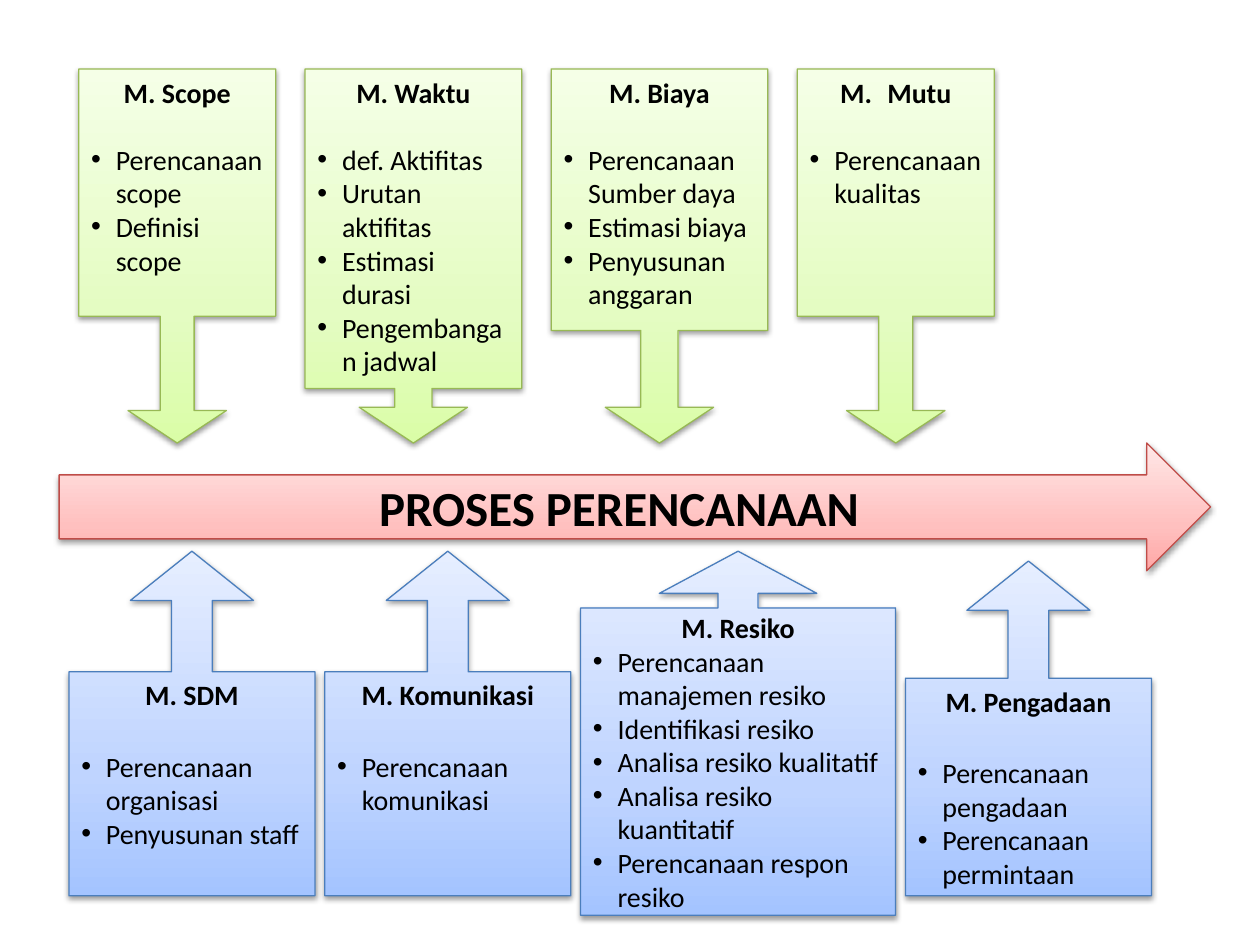
from copy import deepcopy

from lxml.etree import SubElement
from pptx import Presentation
from pptx.dml.color import RGBColor
from pptx.enum.shapes import MSO_SHAPE as Preset
from pptx.enum.text import MSO_ANCHOR as Anchor, PP_ALIGN as Align
from pptx.oxml.ns import qn
from pptx.util import Pt

BLACK = RGBColor(0x00, 0x00, 0x00)
RED_LINE = RGBColor(0xBF, 0x4C, 0x48)
RED_FILL = (RGBColor(0xFF, 0xA6, 0xA5), RGBColor(0xFF, 0xC0, 0xBF), RGBColor(0xFF, 0xE7, 0xE7))
GREEN_LINE = RGBColor(0x98, 0xB9, 0x55)
GREEN_FILL = (RGBColor(0xDA, 0xFD, 0xA7), RGBColor(0xE4, 0xFC, 0xC2), RGBColor(0xF5, 0xFF, 0xE7))
BLUE_LINE = RGBColor(0x4B, 0x7E, 0xBC)
BLUE_FILL = (RGBColor(0xA4, 0xC4, 0xFF), RGBColor(0xBF, 0xD4, 0xFF), RGBColor(0xE6, 0xEE, 0xFF))

NARROW_DOWN = (0.172, 0.25, 0.165, 0.661)
LONG_DOWN = (0.172, 0.25, 0.165, 0.854)
MEDIUM_DOWN = (0.172, 0.25, 0.165, 0.699)
STANDARD_UP = (0.166, 0.25, 0.2, 0.65)
WIDE_UP = (0.127, 0.25, 0.134, 0.844)

TOP_TITLE_GAP, BOTTOM_TITLE_GAP = 19.2, 21.6
BULLET_INDENT, NUMBER_INDENT = 14.1, 27
MUTU_NUMBER = 13

TOP_ROW = [
    ("M. Scope", ["Perencanaan scope", "Definisi scope"],
     112.5, 39.4, 213.75, NARROW_DOWN, Anchor.TOP, TOP_TITLE_GAP),
    ("M. Waktu", ["def. Aktifitas", "Urutan aktifitas", "Estimasi durasi", "Pengembangan jadwal"],
     123.75, 39.4, 213.75, LONG_DOWN, Anchor.TOP, TOP_TITLE_GAP),
    ("M. Biaya", ["Perencanaan Sumber daya", "Estimasi biaya", "Penyusunan anggaran"],
     123.75, 39.4, 213.75, MEDIUM_DOWN, Anchor.TOP, TOP_TITLE_GAP),
    ("Mutu", ["Perencanaan kualitas"],
     112.5, 39.4, 213.75, NARROW_DOWN, Anchor.TOP, TOP_TITLE_GAP),
]
BOTTOM_ROW = [
    ("M. SDM", ["Perencanaan organisasi", "Penyusunan staff"],
     140.6, 315, 196.9, STANDARD_UP, Anchor.TOP, BOTTOM_TITLE_GAP),
    ("M. Komunikasi", ["Perencanaan komunikasi"],
     140.6, 315, 196.9, STANDARD_UP, Anchor.TOP, BOTTOM_TITLE_GAP),
    ("M. Resiko", ["Perencanaan manajemen resiko", "Identifikasi resiko",
                   "Analisa resiko kualitatif", "Analisa resiko kuantitatif",
                   "Perencanaan respon resiko"],
     180, 315, 208, WIDE_UP, Anchor.MIDDLE, 0),
    ("M. Pengadaan", ["Perencanaan pengadaan", "Perencanaan permintaan"],
     140.6, 320.6, 191.3, STANDARD_UP, Anchor.MIDDLE, BOTTOM_TITLE_GAP),
]


def fill_gradient(shape, colors):
    shape.fill.gradient()
    shape.fill.gradient_angle = 90
    stop_list = shape.element.spPr.find(".//" + qn("a:gsLst"))
    stop_list.append(deepcopy(stop_list[-1]))
    for stop, position, color in zip(shape.fill.gradient_stops, (0, 0.35, 1), colors):
        stop.position = position
        stop.color.rgb = color


def add_shadow(shape):
    shape.shadow.inherit = False
    effects = shape.element.spPr.find(qn("a:effectLst"))
    shadow = SubElement(effects, qn("a:outerShdw"), blurRad="40000", dist="20000",
                        dir="5400000", rotWithShape="0")
    color = SubElement(shadow, qn("a:srgbClr"), val="000000")
    SubElement(color, qn("a:alpha"), val="38000")


def add_arrow(slide, preset, left, top, width, height, colors, line_color, anchor):
    shape = slide.shapes.add_shape(preset, Pt(left), Pt(top), Pt(width), Pt(height))
    fill_gradient(shape, colors)
    shape.line.color.rgb = line_color
    shape.line.width = Pt(0.75)
    add_shadow(shape)
    shape.text_frame.word_wrap = True
    shape.text_frame.vertical_anchor = anchor
    return shape


def write_paragraph(paragraph, text, size, bold, alignment):
    paragraph.text = text
    paragraph.alignment = alignment
    font = paragraph.font
    font.name, font.size, font.bold = "Calibri", Pt(size), bold
    font.color.rgb = BLACK


def add_marker(paragraph, indent, tag, **attributes):
    properties = paragraph._p.get_or_add_pPr()
    properties.set("marL", str(Pt(indent)))
    properties.set("indent", str(-Pt(indent)))
    marker = properties.makeelement(qn(tag), attributes)
    properties.insert_element_before(marker, "a:tabLst", "a:defRPr", "a:extLst")


def write_callout(frame, title, items, title_gap):
    heading = frame.paragraphs[0]
    write_paragraph(heading, title, 16, True, Align.CENTER)
    heading.space_after = Pt(title_gap)
    if title == "Mutu":
        add_marker(heading, NUMBER_INDENT, "a:buAutoNum",
                   type="alphaUcPeriod", startAt=str(MUTU_NUMBER))
    for item in items:
        paragraph = frame.add_paragraph()
        write_paragraph(paragraph, item, 16, False, Align.LEFT)
        add_marker(paragraph, BULLET_INDENT, "a:buFont", typeface="Arial")
        add_marker(paragraph, BULLET_INDENT, "a:buChar", char="•")


def add_callout_row(slide, preset, left, gap, callouts, colors, line_color):
    for title, items, width, top, height, proportions, anchor, title_gap in callouts:
        shape = add_arrow(slide, preset, left, top, width, height, colors, line_color, anchor)
        for index, proportion in enumerate(proportions):
            shape.adjustments[index] = proportion
        write_callout(shape.text_frame, title, items, title_gap)
        left += width + gap


def add_process_arrow(slide):
    shape = add_arrow(slide, Preset.RIGHT_ARROW, 33.8, 253.1, 658, 73.1,
                      RED_FILL, RED_LINE, Anchor.MIDDLE)
    write_paragraph(shape.text_frame.paragraphs[0], "PROSES PERENCANAAN", 28, True, Align.CENTER)


def main():
    presentation = Presentation()
    presentation.slide_width, presentation.slide_height = Pt(720), Pt(540)
    slide = presentation.slides.add_slide(presentation.slide_layouts[6])
    add_process_arrow(slide)
    add_callout_row(slide, Preset.DOWN_ARROW_CALLOUT, 45, 16.87, TOP_ROW, GREEN_FILL, GREEN_LINE)
    add_callout_row(slide, Preset.UP_ARROW_CALLOUT, 39.4, 5.6, BOTTOM_ROW, BLUE_FILL, BLUE_LINE)
    presentation.save("out.pptx")


if __name__ == "__main__":
    main()
